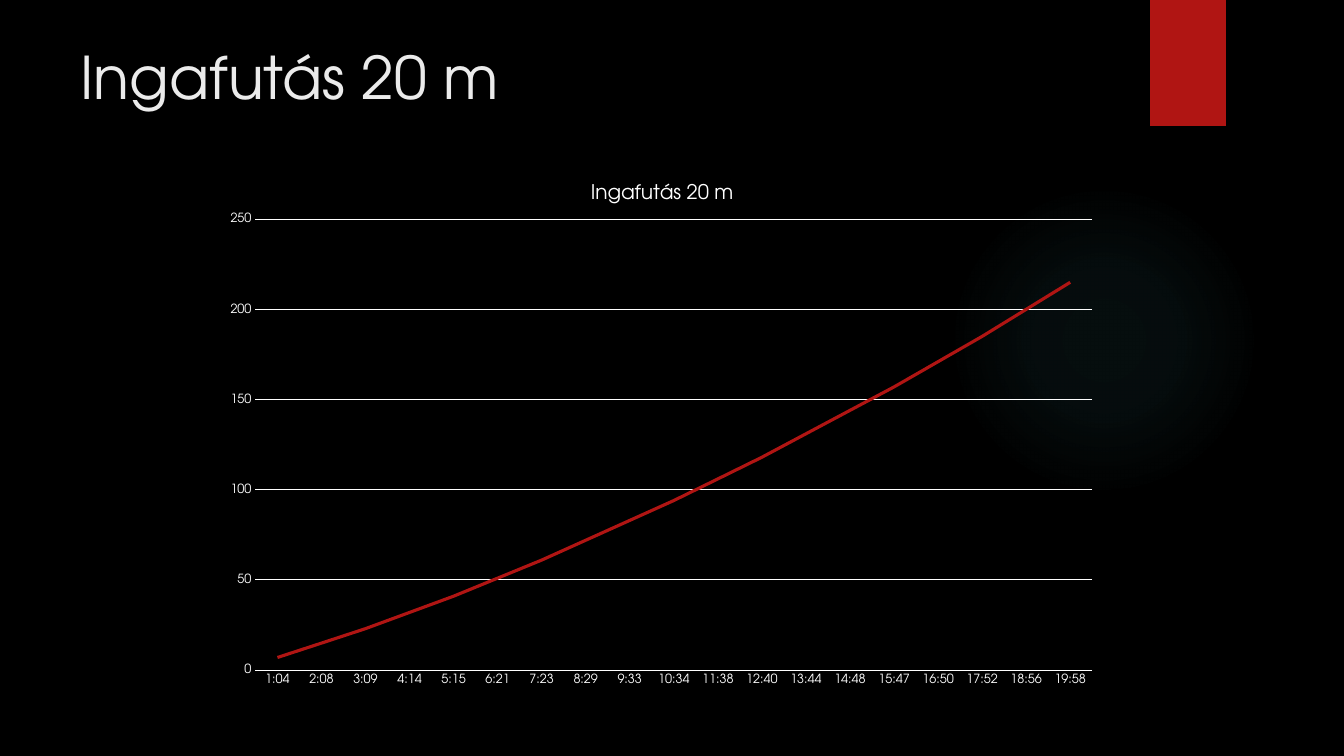
from dataclasses import dataclass

import lxml.etree
import pptx
import pptx.chart.data
import pptx.dml.color
import pptx.enum.chart
import pptx.enum.shapes
import pptx.enum.text
import pptx.oxml
import pptx.oxml.ns
import pptx.util


@dataclass(frozen=True)
class Theme:
    typeface: str = "TeX Gyre Adventor"
    background: str = "000000"
    heading: str = "EBEBEB"
    chart_text: str = "FFFFFF"
    accent: str = "B01513"
    glow: str = "50B9C1"
    heading_size: float = 42
    chart_heading_size: float = 14.4
    axis_size: float = 9
    grid_width: float = 0.75
    curve_width: float = 2.25


@dataclass(frozen=True)
class Area:
    """Left, top, width and height in cells of a 16 by 9 grid."""
    left: float
    top: float
    width: float
    height: float

    def placement(self) -> dict[str, int]:
        return {side: round(getattr(self, side) * CELL)
                for side in ("left", "top", "width", "height")}


@dataclass(frozen=True)
class Decoration:
    outline: pptx.enum.shapes.MSO_SHAPE
    area: Area
    color: str
    glow_stops: tuple[tuple[int, int], ...] = ()  # (position %, opacity %)


THEME = Theme()
SLIDE_WIDTH = pptx.util.Inches(13.33)
SLIDE_HEIGHT = pptx.util.Inches(7.5)
CELL = SLIDE_HEIGHT / 9

HEADING = "Ingafutás 20 m"
HEADING_AREA = Area(0.84, 0.42, 12.35, 1.84)
CHART_AREA = Area(2.57, 1.94, 10.62, 6.32)
PLOT_AREA = Area(0.47, 0.67, 9.96, 5.37)  # measured from the chart's corner

DECORATIONS = (
    Decoration(pptx.enum.shapes.MSO_SHAPE.OVAL, Area(11.29, 2.2, 3.7, 3.7),
               THEME.glow, ((0, 7), (36, 6), (69, 0))),
    Decoration(pptx.enum.shapes.MSO_SHAPE.RECTANGLE, Area(13.69, 0, 0.9, 1.5),
               THEME.accent),
)

LAPS_BY_TIME = {
    "1:04": 7, "2:08": 15, "3:09": 23, "4:14": 32, "5:15": 41,
    "6:21": 51, "7:23": 61, "8:29": 72, "9:33": 83, "10:34": 94,
    "11:38": 106, "12:40": 118, "13:44": 131, "14:48": 144, "15:47": 157,
    "16:50": 171, "17:52": 185, "18:56": 200, "19:58": 215,
}


def rgb(color: str) -> pptx.dml.color.RGBColor:
    return pptx.dml.color.RGBColor.from_string(color)


def apply(target, formats: dict) -> None:
    for name, value in formats.items():
        setattr(target, name, value)


def style_font(font, size: float, color: str) -> None:
    apply(font, {"name": THEME.typeface, "size": pptx.util.Pt(size), "bold": False})
    font.color.rgb = rgb(color)


def style_line(line, color: str, width: float) -> None:
    line.color.rgb = rgb(color)
    line.width = pptx.util.Pt(width)


def radial_fill(color: str, stops: tuple[tuple[int, int], ...]):
    stop_xml = "".join(
        f'<a:gs pos="{position * 1000}"><a:srgbClr val="{color}">'
        f'<a:alpha val="{opacity * 1000}"/></a:srgbClr></a:gs>'
        for position, opacity in stops)
    return pptx.oxml.parse_xml(
        f'<a:gradFill {pptx.oxml.ns.nsdecls("a")} rotWithShape="1">'
        f'<a:gsLst>{stop_xml}</a:gsLst><a:path path="circle">'
        '<a:fillToRect l="50000" t="50000" r="50000" b="50000"/>'
        '</a:path></a:gradFill>')


def draw_decoration(slide, decoration: Decoration) -> None:
    shape = slide.shapes.add_shape(decoration.outline, **decoration.area.placement())
    shape.shadow.inherit = False
    shape.line.fill.background()
    shape.fill.solid()
    shape.fill.fore_color.rgb = rgb(decoration.color)
    if decoration.glow_stops:
        properties = shape.element.spPr
        solid = properties.find(pptx.oxml.ns.qn("a:solidFill"))
        properties.replace(solid, radial_fill(decoration.color, decoration.glow_stops))


def draw_heading(slide) -> None:
    heading = slide.shapes.title
    apply(heading, HEADING_AREA.placement())
    frame = heading.text_frame
    frame.text = HEADING
    apply(frame, {"word_wrap": True,
                  "auto_size": pptx.enum.text.MSO_AUTO_SIZE.NONE,
                  "vertical_anchor": pptx.enum.text.MSO_ANCHOR.TOP})
    line = frame.paragraphs[0]
    line.alignment = pptx.enum.text.PP_ALIGN.LEFT
    style_font(line.runs[0].font, THEME.heading_size, THEME.heading)


def fix_plot_area(chart) -> None:
    qn = pptx.oxml.ns.qn
    plot_area = chart.element.find(f".//{qn('c:plotArea')}")
    for automatic in plot_area.findall(qn("c:layout")):
        plot_area.remove(automatic)
    layout = lxml.etree.Element(qn("c:layout"))
    manual = lxml.etree.SubElement(layout, qn("c:manualLayout"))
    settings = {
        "layoutTarget": "inner", "xMode": "edge", "yMode": "edge",
        "x": PLOT_AREA.left / CHART_AREA.width,
        "y": PLOT_AREA.top / CHART_AREA.height,
        "w": PLOT_AREA.width / CHART_AREA.width,
        "h": PLOT_AREA.height / CHART_AREA.height,
    }
    for tag, value in settings.items():
        lxml.etree.SubElement(manual, qn(f"c:{tag}")).set("val", str(value))
    plot_area.insert(0, layout)


def draw_chart(slide) -> None:
    data = pptx.chart.data.CategoryChartData()
    data.categories = list(LAPS_BY_TIME)
    data.add_series("Series 1", list(LAPS_BY_TIME.values()))
    chart = slide.shapes.add_chart(
        pptx.enum.chart.XL_CHART_TYPE.LINE, *CHART_AREA.placement().values(), data).chart
    style_font(chart.font, THEME.axis_size, THEME.chart_text)
    apply(chart, {"has_legend": False, "has_title": True})

    # Chart heading
    caption = chart.chart_title
    caption.include_in_layout = False
    caption.text_frame.text = HEADING
    style_font(caption.text_frame.paragraphs[0].runs[0].font,
               THEME.chart_heading_size, THEME.chart_text)

    # Axes and gridlines
    times, laps = chart.category_axis, chart.value_axis
    no_tick = pptx.enum.chart.XL_TICK_MARK.NONE
    for axis in (times, laps):
        apply(axis, {"major_tick_mark": no_tick, "minor_tick_mark": no_tick})
        style_font(axis.tick_labels.font, THEME.axis_size, THEME.chart_text)
    apply(laps, {"minimum_scale": 0, "maximum_scale": 250, "major_unit": 50,
                 "has_major_gridlines": True})
    laps.format.line.fill.background()
    for line in (times.format.line, laps.major_gridlines.format.line):
        style_line(line, THEME.chart_text, THEME.grid_width)

    # Curve
    chart.plots[0].vary_by_categories = False
    curve = chart.plots[0].series[0]
    curve.smooth = False
    style_line(curve.format.line, THEME.accent, THEME.curve_width)
    fix_plot_area(chart)


def main() -> None:
    deck = pptx.Presentation()
    apply(deck, {"slide_width": SLIDE_WIDTH, "slide_height": SLIDE_HEIGHT})
    slide = deck.slides.add_slide(deck.slide_layouts.get_by_name("Title Only"))
    slide.background.fill.solid()
    slide.background.fill.fore_color.rgb = rgb(THEME.background)
    for decoration in DECORATIONS:
        draw_decoration(slide, decoration)
    draw_chart(slide)
    draw_heading(slide)
    deck.save("out.pptx")


if __name__ == "__main__":
    main()
